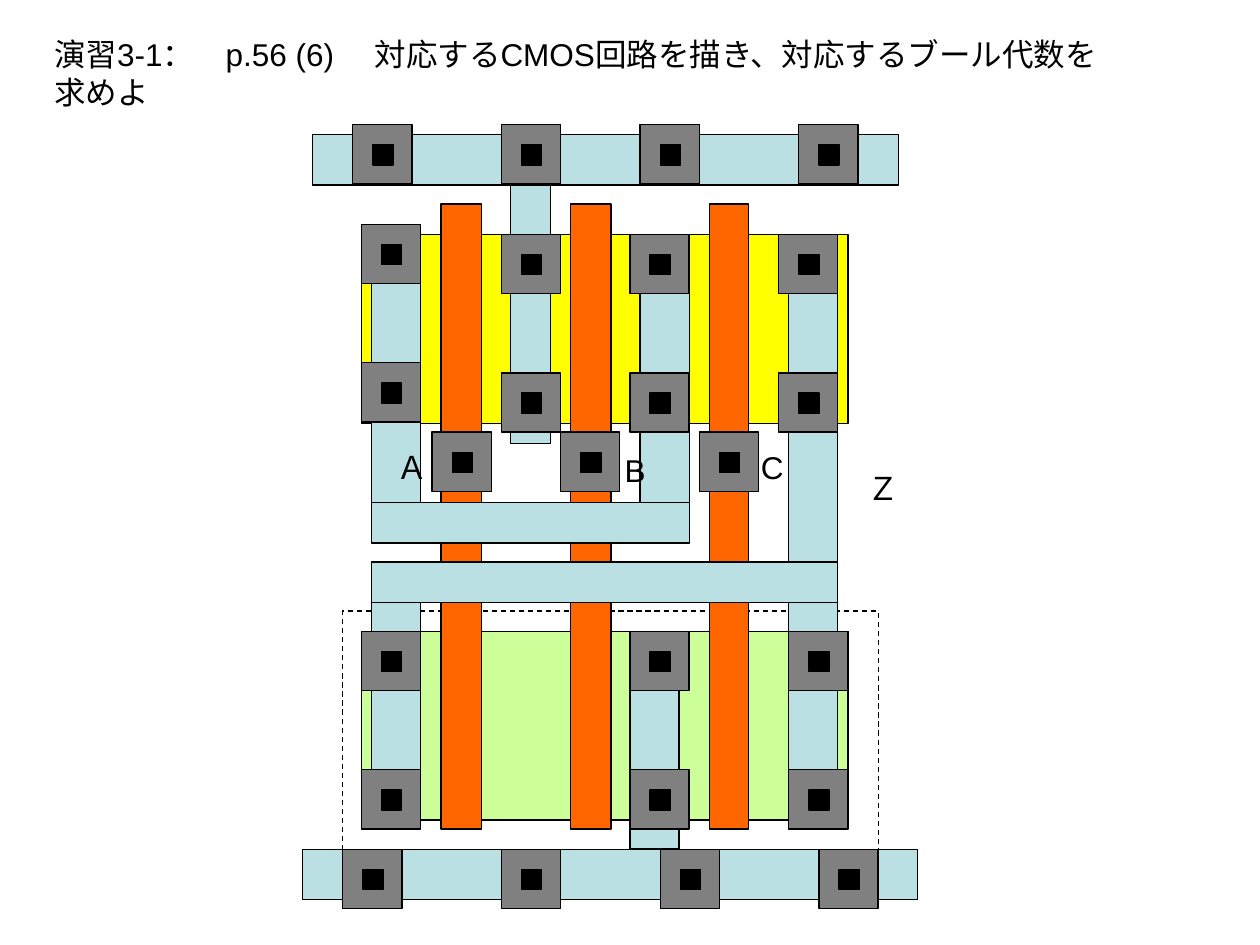
"""Build the CMOS layout exercise slide with its wires, contacts and labels."""
import pptx
import pptx.dml.color
import pptx.enum.dml
import pptx.enum.shapes
import pptx.enum.text
import pptx.util

Inches = pptx.util.Inches
RGBColor = pptx.dml.color.RGBColor
BLACK = RGBColor(0x00, 0x00, 0x00)
GREY = RGBColor(0x80, 0x80, 0x80)
METAL = RGBColor(0xBB, 0xE0, 0xE3)
POLY = RGBColor(0xFF, 0x66, 0x00)
P_DIFFUSION = RGBColor(0xFF, 0xFF, 0x00)
N_DIFFUSION = RGBColor(0xCC, 0xFF, 0x99)

FONT_FORMAT = {"name": "Arial", "size": pptx.util.Pt(18), "bold": False}
FRAME_FORMAT = {
    "auto_size": pptx.enum.text.MSO_AUTO_SIZE.NONE,
    "vertical_anchor": pptx.enum.text.MSO_ANCHOR.TOP,
    "margin_left": Inches(0.1),
    "margin_right": Inches(0.1),
    "margin_top": Inches(0.05),
    "margin_bottom": Inches(0.05),
}


def add_region(shapes, left, top, width, height, color=None):
    region = shapes.add_shape(
        pptx.enum.shapes.MSO_SHAPE.RECTANGLE,
        Inches(left), Inches(top), Inches(width), Inches(height))
    region.shadow.inherit = False
    region.line.color.rgb = BLACK
    region.line.width = pptx.util.Pt(0.75)
    if color is None:
        region.fill.background()
    else:
        region.fill.solid()
        region.fill.fore_color.rgb = color
    return region


def write_text(frame, wording, wrap):
    frame.text = wording
    frame.word_wrap = wrap
    for attribute, value in FRAME_FORMAT.items():
        setattr(frame, attribute, value)
    paragraph = frame.paragraphs[0]
    paragraph.alignment = pptx.enum.text.PP_ALIGN.LEFT
    font = paragraph.runs[0].font
    for attribute, value in FONT_FORMAT.items():
        setattr(font, attribute, value)
    font.color.rgb = BLACK


deck = pptx.Presentation()
deck.slide_width = Inches(10)
deck.slide_height = Inches(7.5)
slide = deck.slides.add_slide(deck.slide_layouts[5])

exercise = slide.shapes.title
exercise_place = {"left": 0.33, "top": 0.23, "width": 8.7, "height": 0.4}
for attribute, value in exercise_place.items():
    setattr(exercise, attribute, Inches(value))
write_text(
    exercise.text_frame,
    "演習3-1：　p.56 (6) 　対応するCMOS回路を描き、対応するブール代数を求めよ",
    True)

well = add_region(slide.shapes, 2.72, 4.85, 4.25, 2.28)
well.line.dash_style = pptx.enum.dml.MSO_LINE.DASH

for top, diffusion in ((1.86, P_DIFFUSION), (5.01, N_DIFFUSION)):
    add_region(slide.shapes, 2.87, top, 3.86, 1.5, diffusion)

for left, width in ((3.5, 0.32), (4.53, 0.32), (5.63, 0.31)):
    add_region(slide.shapes, left, 1.62, width, 4.96, POLY)

wires = (
    (2.4, 6.74, 4.88, 0.4),
    (2.48, 1.07, 4.65, 0.4),
    (2.95, 1.78, 0.39, 2.28),
    (2.95, 4.77, 0.39, 1.73),
    (4.05, 1.47, 0.32, 2.05),
    (5.08, 1.86, 0.39, 2.2),
    (6.26, 1.86, 0.39, 4.41),
    (5, 5.01, 0.39, 1.73),
    (2.95, 4.46, 3.7, 0.32),
    (2.95, 3.99, 2.52, 0.32),
)
for wire in wires:
    add_region(slide.shapes, *wire, METAL)

contact_rows = (
    (0.99, (2.8, 3.98, 5.08, 6.34)),
    (1.78, (2.87,)),
    (1.86, (3.98, 5, 6.18)),
    (2.88, (2.87,)),
    (2.96, (3.98, 5, 6.18)),
    (3.43, (3.43, 4.45, 5.55)),
    (5.01, (2.87, 5, 6.26)),
    (6.11, (2.87, 5, 6.26)),
    (6.74, (2.72, 3.98, 5.24, 6.5)),
)
for top, lefts in contact_rows:
    for left in lefts:
        contact = slide.shapes.add_group_shape()
        add_region(contact.shapes, left, top, 0.47, 0.47, GREY)
        add_region(contact.shapes, left + 0.16, top + 0.16, 0.16, 0.16, BLACK)

terminals = (
    ("Ｚ", 6.79, 3.67, 0.36),
    ("Ａ", 3.05, 3.51, 0.38),
    ("B", 4.86, 3.53, 0.37),
    ("C", 5.94, 3.51, 0.38),
)
for terminal, left, top, width in terminals:
    label = slide.shapes.add_textbox(
        Inches(left), Inches(top), Inches(width), Inches(0.4))
    write_text(label.text_frame, terminal, False)

deck.save("out.pptx")
